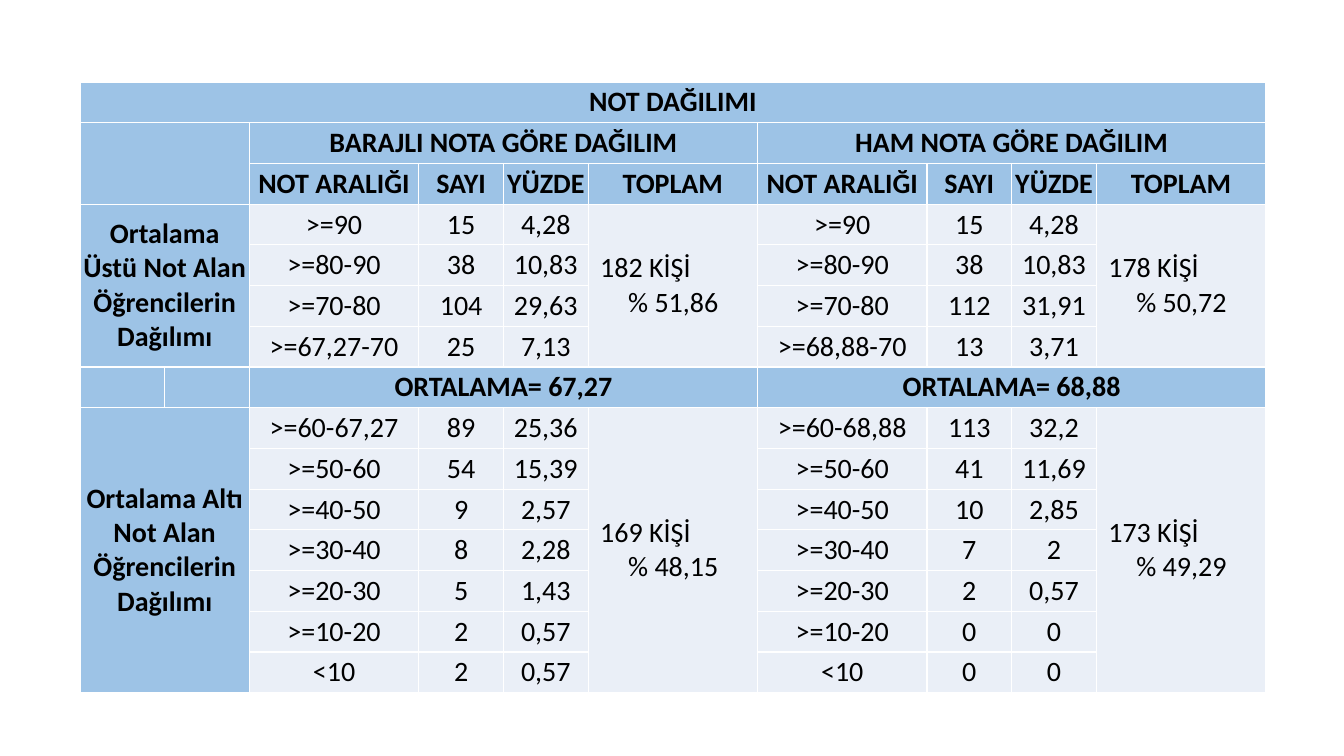
import dataclasses

import lxml.etree
import pptx
import pptx.dml.color
import pptx.enum.text
import pptx.oxml.ns
import pptx.util


@dataclasses.dataclass(frozen=True)
class Theme:
    font: str = "Calibri"
    size: int = 20
    ink: str = "000000"
    header: str = "9DC3E6"
    body: str = "EAEFF7"
    border: str = "FFFFFF"
    border_width: int = 1


THEME = Theme()
CENTER = pptx.enum.text.PP_ALIGN.CENTER
LEFT = pptx.enum.text.PP_ALIGN.LEFT

# Column widths in equal units: two label columns, then two grade blocks
BLOCK_UNITS = [2, 1, 1, 2]
COLUMN_UNITS = [1, 1] + BLOCK_UNITS * 2
ROW_COUNT = 15
ABOVE_ROW, AVERAGE_ROW, BELOW_ROW = 3, 7, 8
TOTAL_INDENTS = [12, 40]

HEADINGS = ["NOT ARALIĞI", "SAYI", "YÜZDE", "TOPLAM"]
LABELS = {
    ABOVE_ROW: "Ortalama Üstü Not Alan Öğrencilerin Dağılımı",
    BELOW_ROW: "Ortalama Altı Not Alan Öğrencilerin Dağılımı",
}


@dataclasses.dataclass(frozen=True)
class Distribution:
    title: str
    average: str
    counts: list
    percents: list
    totals: dict

    def ranges(self):
        return [">=90", ">=80-90", ">=70-80", f">={self.average}-70",
                f">=60-{self.average}", ">=50-60", ">=40-50", ">=30-40",
                ">=20-30", ">=10-20", "<10"]


DISTRIBUTIONS = [
    Distribution(
        "BARAJLI NOTA GÖRE DAĞILIM", "67,27",
        ["15", "38", "104", "25", "89", "54", "9", "8", "5", "2", "2"],
        ["4,28", "10,83", "29,63", "7,13", "25,36", "15,39", "2,57", "2,28",
         "1,43", "0,57", "0,57"],
        {ABOVE_ROW: ["182 KİŞİ", "% 51,86"], BELOW_ROW: ["169 KİŞİ", "% 48,15"]}),
    Distribution(
        "HAM NOTA GÖRE DAĞILIM", "68,88",
        ["15", "38", "112", "13", "113", "41", "10", "7", "2", "0", "0"],
        ["4,28", "10,83", "31,91", "3,71", "32,2", "11,69", "2,85", "2",
         "0,57", "0", "0"],
        {ABOVE_ROW: ["178 KİŞİ", "% 50,72"], BELOW_ROW: ["173 KİŞİ", "% 49,29"]}),
]


def px(length):
    return pptx.util.Emu(round(length * 914400 / 100.8))


def rgb(value):
    return pptx.dml.color.RGBColor.from_string(value)


def add_borders(cell):
    properties = cell._tc.get_or_add_tcPr()
    qn = pptx.oxml.ns.qn
    for index, side in enumerate(["lnL", "lnR", "lnT", "lnB"]):
        line = lxml.etree.Element(qn(f"a:{side}"))
        line.set("w", str(pptx.util.Pt(THEME.border_width)))
        fill = lxml.etree.SubElement(line, qn("a:solidFill"))
        lxml.etree.SubElement(fill, qn("a:srgbClr")).set("val", THEME.border)
        properties.insert(index, line)


def style_cell(cell, fill):
    cell.fill.solid()
    cell.fill.fore_color.rgb = rgb(fill)
    cell.vertical_anchor = pptx.enum.text.MSO_ANCHOR.MIDDLE
    cell.margin_left = cell.margin_right = 0
    cell.margin_top = cell.margin_bottom = 0
    add_borders(cell)


def write(para, text, bold, align=CENTER):
    para.alignment = align
    span = para.add_run()
    span.text = text
    span.font.name = THEME.font
    span.font.size = pptx.util.Pt(THEME.size)
    span.font.bold = bold
    span.font.color.rgb = rgb(THEME.ink)


def write_cell(table, row, column, text, bold=False):
    write(table.cell(row, column).text_frame.paragraphs[0], text, bold)


def merge(table, row, column, rows, columns):
    table.cell(row, column).merge(table.cell(row + rows - 1, column + columns - 1))


def write_total(table, row, column, lines):
    frame = table.cell(row, column).text_frame
    for index, (line, indent) in enumerate(zip(lines, TOTAL_INDENTS)):
        para = frame.paragraphs[0] if index == 0 else frame.add_paragraph()
        write(para, line, False, LEFT)
        para._p.get_or_add_pPr().set("marL", str(px(indent)))


def section_rows(row):
    return AVERAGE_ROW - row if row == ABOVE_ROW else ROW_COUNT - row


def add_grid(page, left, top, width, height):
    columns = len(COLUMN_UNITS)
    table = page.shapes.add_table(
        ROW_COUNT, columns, px(left), px(top), px(width), px(height)).table
    table.first_row = table.horz_banding = False
    for column, units in zip(table.columns, COLUMN_UNITS):
        column.width = px(width * units / sum(COLUMN_UNITS))
    for row in table.rows:
        row.height = px(height / ROW_COUNT)
    for row in range(ROW_COUNT):
        for column in range(columns):
            is_header = row < ABOVE_ROW or row == AVERAGE_ROW or column < 2
            style_cell(table.cell(row, column), THEME.header if is_header else THEME.body)
    return table


def add_labels(table):
    merge(table, 0, 0, 1, len(COLUMN_UNITS))
    write_cell(table, 0, 0, "NOT DAĞILIMI", True)
    merge(table, 1, 0, 2, 2)
    for row, label in LABELS.items():
        merge(table, row, 0, section_rows(row), 2)
        write_cell(table, row, 0, label, True)


def add_distribution(table, left, data):
    # Spanning headings
    for row, text in [(1, data.title), (AVERAGE_ROW, f"ORTALAMA= {data.average}")]:
        merge(table, row, left, 1, len(BLOCK_UNITS))
        write_cell(table, row, left, text, True)
    for offset, heading in enumerate(HEADINGS):
        write_cell(table, 2, left + offset, heading, True)
    # Grade ranges, counts and percentages
    rows = [row for row in range(ABOVE_ROW, ROW_COUNT) if row != AVERAGE_ROW]
    for row, values in zip(rows, zip(data.ranges(), data.counts, data.percents)):
        for offset, value in enumerate(values):
            write_cell(table, row, left + offset, value)
    # Section totals
    for row, lines in data.totals.items():
        merge(table, row, left + 3, section_rows(row), 1)
        write_total(table, row, left + 3, lines)


def main():
    deck = pptx.Presentation()
    deck.slide_width, deck.slide_height = px(1344), px(756)
    page = deck.slides.add_slide(deck.slide_layouts[6])
    table = add_grid(page, 80, 82, 1186, 611)
    add_labels(table)
    for index, data in enumerate(DISTRIBUTIONS):
        add_distribution(table, 2 + index * len(BLOCK_UNITS), data)
    deck.save("out.pptx")


if __name__ == "__main__":
    main()
